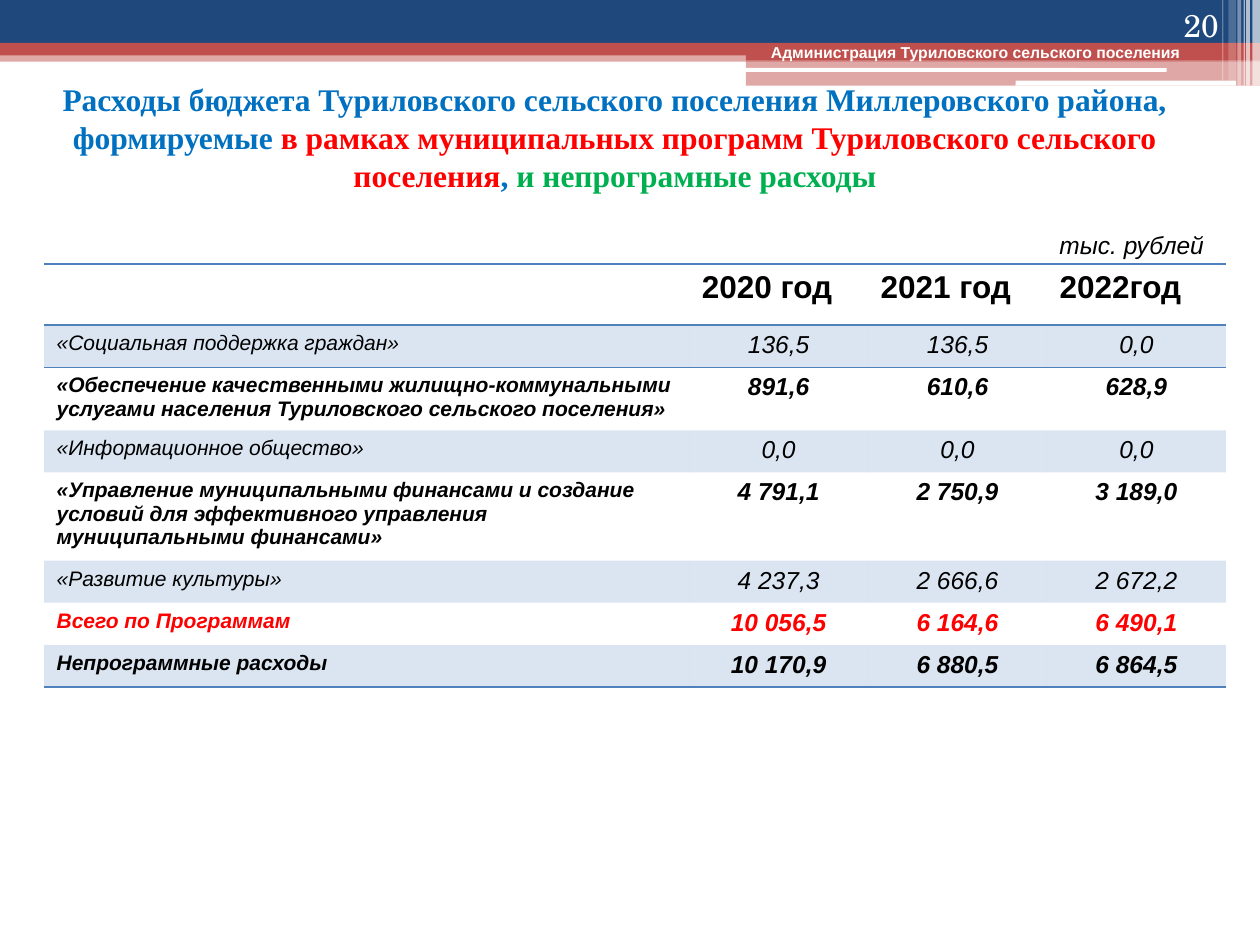
import pptx
import pptx.util
import pptx.dml.color
import pptx.enum.shapes
import pptx.enum.text
import pptx.oxml
import pptx.oxml.ns

THEME = {
    "navy": "1F497D", "brick": "C0504D", "white": "FFFFFF", "black": "000000",
    "blue": "0070C0", "red": "FF0000", "green": "00B050", "line": "4F81BD",
    "sans": "Arial", "serif": "Times New Roman", "number": "TeX Gyre Schola",
    "small": 9, "label": 12, "value": 14, "heading": 18,
}
SHAPE = pptx.enum.shapes.MSO_SHAPE
ALIGN = pptx.enum.text.PP_ALIGN
ANCHOR = pptx.enum.text.MSO_ANCHOR

BARS = [
    (0, 5.33, 100, 1.2, "brick", 50),
    (0, 0, 100, 4.53, "navy", 100),
    (0, 4.53, 100, 1.33, "brick", 100),
    (59.2, 5.2, 40.8, 1.2, "brick", 100),
    (59.2, 6.4, 40.8, 2.67, "brick", 50),
]
PILLS = [(59.1, 7.2, 33.5, 0.4), (80.6, 8.53, 17.5, 0.53)]
STRIPES = [
    (99.4, 0.6, 9.07, 65), (98.9, 0.3, 9.07, 65), (98.7, 0.1, 9.07, 60),
    (98.2, 0.3, 9.07, 40), (97.5, 0.6, 8.53, 20), (97, 0.1, 8.53, 30),
]
TITLE = [
    ("Расходы бюджета Туриловского сельского поселения Миллеровского района, формируемые ", "blue"),
    ("в рамках муниципальных программ Туриловского сельского поселения", "red"),
    (", ", "blue"),
    ("и непрограмные расходы", "green"),
]
HEADER = ["", "2020 год", "2021 год", "2022год"]
ROWS = [
    (["«Социальная поддержка граждан»", "136,5", "136,5", "0,0"], 1, False, "black"),
    (["«Обеспечение качественными жилищно-коммунальными услугами населения "
      "Туриловского сельского поселения»", "891,6", "610,6", "628,9"], 2, True, "black"),
    (["«Информационное общество»", "0,0", "0,0", "0,0"], 1, False, "black"),
    (["«Управление муниципальными финансами и создание условий для эффективного "
      "управления муниципальными финансами»", "4 791,1", "2 750,9", "3 189,0"], 3, True, "black"),
    (["«Развитие культуры»", "4 237,3", "2 666,6", "2 672,2"], 1, False, "black"),
    (["Всего по Программам", "10 056,5", "6 164,6", "6 490,1"], 1, True, "red"),
    (["Непрограммные расходы", "10 170,9", "6 880,5", "6 864,5"], 1, True, "black"),
]
COLUMNS = [51.2, 14.2, 14.2, 14.2]
HEADER_HEIGHT = 6.47
ROW_HEIGHTS = {1: 4.27, 2: 6.33, 3: 8.8}

prs = pptx.Presentation()
prs.slide_width = pptx.util.Inches(10)
prs.slide_height = pptx.util.Inches(7.5)
s = prs.slides.add_slide(prs.slide_layouts[5])


def across(share):
    return int(prs.slide_width * share / 100)


def down(share):
    return int(prs.slide_height * share / 100)


def box(x, y, w, h):
    return across(x), down(y), across(w), down(h)


def rgb(name):
    return pptx.dml.color.RGBColor.from_string(THEME[name])


def paint(fill, element, color, opacity):
    fill.solid()
    fill.fore_color.rgb = rgb(color)
    if opacity < 100:
        clr = element.find(".//" + pptx.oxml.ns.qn("a:srgbClr"))
        clr.append(pptx.oxml.parse_xml(
            f'<a:alpha {pptx.oxml.ns.nsdecls("a")} val="{opacity * 1000}"/>'))


def add_bar(x, y, w, h, color, opacity, kind=SHAPE.RECTANGLE):
    sp = s.shapes.add_shape(kind, *box(x, y, w, h))
    sp.shadow.inherit = False
    sp.line.fill.background()
    paint(sp.fill, sp.element, color, opacity)


def write(p, text, size="value", font="sans", color="black", bold=False, italic=False, align=ALIGN.LEFT):
    p.alignment = align
    r = p.add_run()
    r.text = text
    r.font.size = pptx.util.Pt(THEME[size])
    r.font.name = THEME[font]
    r.font.color.rgb = rgb(color)
    r.font.bold = bold
    r.font.italic = italic


def add_text(x, y, w, h, text, anchor=ANCHOR.TOP, **style):
    tf = s.shapes.add_textbox(*box(x, y, w, h)).text_frame
    tf.word_wrap = True
    tf.vertical_anchor = anchor
    write(tf.paragraphs[0], text, **style)


def add_border(cell, side):
    cell._tc.get_or_add_tcPr().append(pptx.oxml.parse_xml(
        f'<a:{side} {pptx.oxml.ns.nsdecls("a")} w="12700"><a:solidFill>'
        f'<a:srgbClr val="{THEME["line"]}"/></a:solidFill></a:{side}>'))


def add_title():
    title = s.shapes.title
    title.left, title.top, title.width, title.height = box(0, 8, 97.6, 16.8)
    title.element.getparent().append(title.element)
    tf = title.text_frame
    tf.word_wrap = True
    tf.auto_size = pptx.enum.text.MSO_AUTO_SIZE.NONE
    tf.vertical_anchor = ANCHOR.TOP
    tf.margin_top = pptx.util.Inches(0.03)
    p = tf.paragraphs[0]
    p.line_spacing = pptx.util.Pt(21.7)
    for text, color in TITLE:
        write(p, text, size="heading", font="serif", color=color, bold=True, align=ALIGN.CENTER)


def add_budget_table():
    heights = [HEADER_HEIGHT] + [ROW_HEIGHTS[lines] for _, lines, _, _ in ROWS]
    frame = s.shapes.add_table(len(heights), len(COLUMNS),
                               *box(3.5, 27.95, sum(COLUMNS), sum(heights)))
    table = frame.table
    table.first_row = table.horz_banding = False
    style = frame.element.find(".//" + pptx.oxml.ns.qn("a:tableStyleId"))
    style.text = "{2D5ABB26-0587-4C30-8999-92F81FD0307C}"
    for column, width in zip(table.columns, COLUMNS):
        column.width = across(width)
    for row, height in zip(table.rows, heights):
        row.height = down(height)
    for j, text in enumerate(HEADER):
        cell = table.cell(0, j)
        add_border(cell, "lnT")
        add_border(cell, "lnB")
        cell.fill.background()
        write(cell.text_frame.paragraphs[0], text, size="heading", bold=True)
    for i, (texts, _, bold, color) in enumerate(ROWS, 1):
        for j, text in enumerate(texts):
            cell = table.cell(i, j)
            if i == 1:
                add_border(cell, "lnT")
            if i == len(ROWS):
                add_border(cell, "lnB")
            if i % 2:
                cell.fill.solid()
                fill = cell._tc.tcPr.find(pptx.oxml.ns.qn("a:solidFill"))
                paint(cell.fill, fill, "line", 20)
            else:
                cell.fill.background()
            write(cell.text_frame.paragraphs[0], text, size="value" if j else "label",
                  color=color, bold=bold, italic=True, align=ALIGN.CENTER if j else ALIGN.LEFT)


for bar in BARS:
    add_bar(*bar)
for pill in PILLS:
    add_bar(*pill, "white", 100, SHAPE.ROUNDED_RECTANGLE)
for x, w, h, opacity in STRIPES:
    add_bar(x, 0, w, h, "white", opacity)
add_text(60.2, 3.87, 35.4, 3.33, "Администрация Туриловского сельского поселения",
         size="small", color="white", bold=True)
add_title()
add_text(89.4, 0, 8.3, 5.33, "20", anchor=ANCHOR.BOTTOM, size="heading", font="number",
         color="white", align=ALIGN.RIGHT)
add_budget_table()
add_text(83.1, 23.73, 14.2, 4.53, "тыс. рублей", italic=True)
prs.save("out.pptx")
